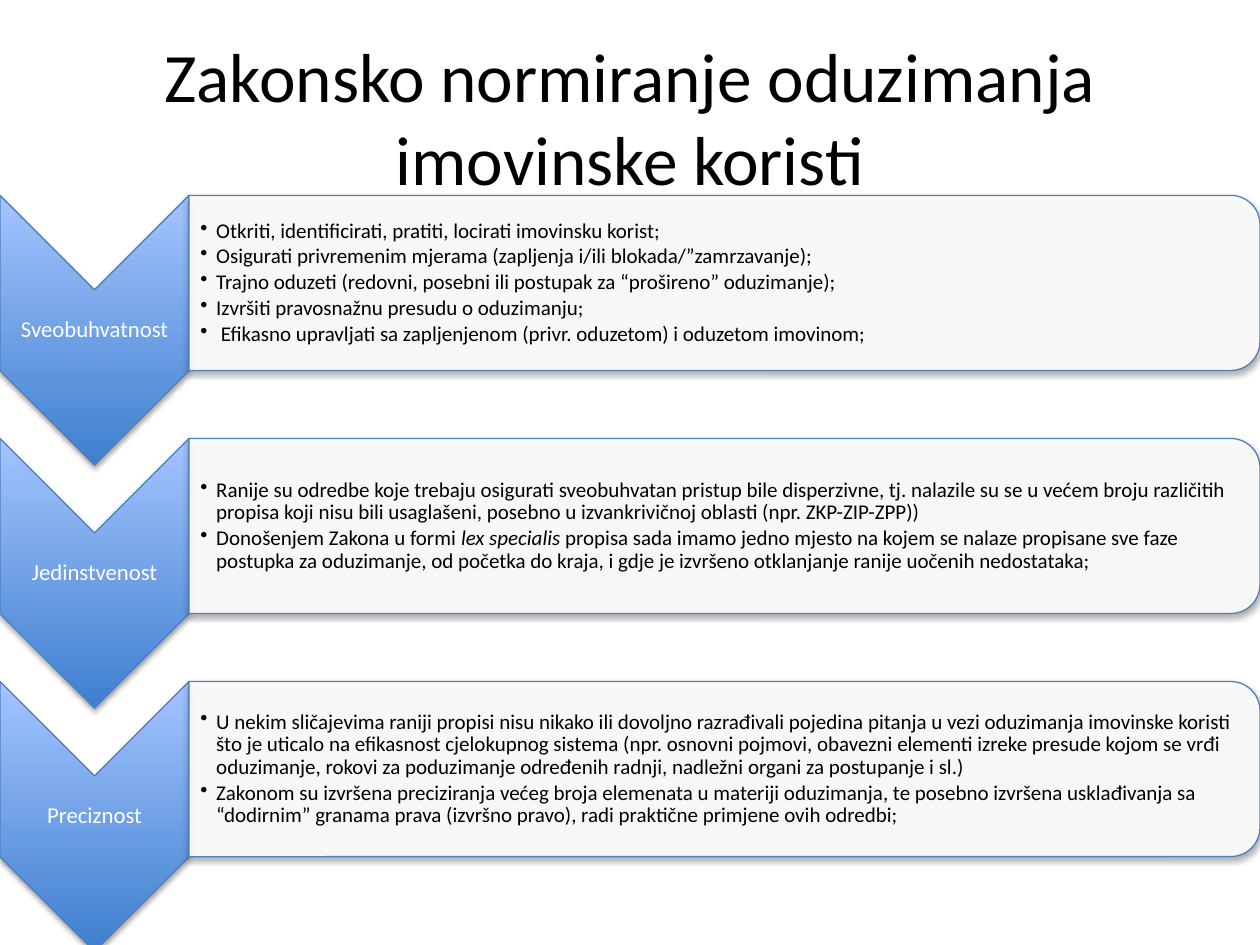
from dataclasses import dataclass

from lxml import etree
from pptx import Presentation
from pptx.dml.color import RGBColor
from pptx.enum.shapes import MSO_SHAPE
from pptx.enum.text import MSO_ANCHOR, MSO_AUTO_SIZE, PP_ALIGN
from pptx.oxml.ns import qn
from pptx.shapes.autoshape import Shape
from pptx.slide import Slide
from pptx.text.text import TextFrame, _Paragraph
from pptx.util import Cm, Pt

CHEVRON = MSO_SHAPE.CHEVRON
ROUNDED_PANEL = MSO_SHAPE.ROUND_2_SAME_RECTANGLE
MIDDLE = MSO_ANCHOR.MIDDLE
CENTER = PP_ALIGN.CENTER
NO_AUTOFIT = MSO_AUTO_SIZE.NONE

BLACK = RGBColor(0x00, 0x00, 0x00)
WHITE = RGBColor(0xFF, 0xFF, 0xFF)
OUTLINE = RGBColor(0x4F, 0x81, 0xBD)
GRADIENT_DARK = RGBColor(0x3F, 0x7F, 0xCE)
GRADIENT_LIGHT = RGBColor(0xA4, 0xC4, 0xFF)

FONT = "Calibri"
SLIDE_WIDTH = 25.4
FIRST_TOP = 3.94
ROW_PITCH = 4.9
CHEVRON_WIDTH, CHEVRON_HEIGHT = 3.81, 5.44
LABEL_HEIGHT = 1.63
PANEL_HEIGHT = 3.53
LIST_WIDTH, LIST_HEIGHT = 21.44, 3.18
THIN_INSET = 0.02


@dataclass(frozen=True)
class Span:
    text: str
    italic: bool = False


@dataclass(frozen=True)
class Principle:
    label: str
    points: list[list[Span]]


PRINCIPLES = [
    Principle("Sveobuhvatnost", [
        [Span("Otkriti, identificirati, pratiti, locirati imovinsku korist;")],
        [Span("Osigurati privremenim mjerama (zapljenja i/ili blokada/”zamrzavanje);")],
        [Span("Trajno oduzeti (redovni, posebni ili postupak za “prošireno” oduzimanje);")],
        [Span("Izvršiti pravosnažnu presudu o oduzimanju;")],
        [Span(" Efikasno upravljati sa zapljenjenom (privr. oduzetom) i oduzetom imovinom;")],
    ]),
    Principle("Jedinstvenost", [
        [Span("Ranije su odredbe koje trebaju osigurati sveobuhvatan pristup bile "
              "disperzivne, tj. nalazile su se u većem broju različitih propisa koji nisu "
              "bili usaglašeni, posebno u izvankrivičnoj oblasti (npr. ZKP-ZIP-ZPP))")],
        [Span("Donošenjem Zakona u formi "),
         Span("lex specialis", italic=True),
         Span(" propisa sada imamo jedno mjesto na kojem se nalaze propisane sve faze "
              "postupka za oduzimanje, od početka do kraja, i gdje je izvršeno "
              "otklanjanje ranije uočenih nedostataka;")],
    ]),
    Principle("Preciznost", [
        [Span("U nekim sličajevima raniji propisi nisu nikako ili dovoljno razrađivali "
              "pojedina pitanja u vezi oduzimanja imovinske koristi što je uticalo na "
              "efikasnost cjelokupnog sistema (npr. osnovni pojmovi, obavezni elementi "
              "izreke presude kojom se vrđi oduzimanje, rokovi za poduzimanje određenih "
              "radnji, nadležni organi za postupanje i sl.)")],
        [Span("Zakonom su izvršena preciziranja većeg broja elemenata u materiji "
              "oduzimanja, te posebno izvršena usklađivanja sa “dodirnim” granama prava "
              "(izvršno pravo), radi praktične primjene ovih odredbi;")],
    ]),
]


def add_run(paragraph: _Paragraph, span: Span, size: float, color: RGBColor) -> None:
    run = paragraph.add_run()
    run.text = span.text
    run.font.name = FONT
    run.font.size = Pt(size)
    run.font.color.rgb = color
    if span.italic:
        run.font.italic = True


def add_drop_shadow(shape: Shape) -> None:
    shape.shadow.inherit = False
    effects = shape._element.spPr.find(qn("a:effectLst"))
    shadow = etree.SubElement(effects, qn("a:outerShdw"), blurRad="40000",
                              dist="23000", dir="5400000", rotWithShape="0")
    color = etree.SubElement(shadow, qn("a:srgbClr"), val=str(BLACK))
    etree.SubElement(color, qn("a:alpha"), val="35000")


def add_turned_shape(slide: Slide, kind: MSO_SHAPE, left: float, top: float,
                     width: float, height: float) -> Shape:
    """Add a shape turned by 90 degrees that covers the given area on the slide."""
    shift = (width - height) / 2
    shape = slide.shapes.add_shape(kind, Cm(left + shift), Cm(top - shift),
                                   Cm(height), Cm(width))
    shape.rotation = 90
    shape.line.color.rgb = OUTLINE
    shape.line.width = Pt(0.75)
    add_drop_shadow(shape)
    return shape


def fill_chevron(shape: Shape) -> None:
    shape.fill.gradient()
    shape.fill.gradient_angle = 90
    for stop, color in zip(shape.fill.gradient_stops, (GRADIENT_DARK, GRADIENT_LIGHT)):
        stop.color.rgb = color
    shape._element.spPr.find(qn("a:gradFill")).set("rotWithShape", "0")


def fill_panel(shape: Shape) -> None:
    shape.fill.solid()
    shape.fill.fore_color.rgb = WHITE
    color = shape._element.spPr.find(qn("a:solidFill")).find(qn("a:srgbClr"))
    etree.SubElement(color, qn("a:alpha"), val="90000")


def add_text_frame(slide: Slide, left: float, top: float, width: float, height: float,
                   left_inset: float = THIN_INSET) -> TextFrame:
    frame = slide.shapes.add_textbox(Cm(left), Cm(top), Cm(width), Cm(height)).text_frame
    frame.word_wrap = True
    frame.vertical_anchor = MIDDLE
    frame.margin_left = Cm(left_inset)
    frame.margin_top = frame.margin_right = frame.margin_bottom = Cm(THIN_INSET)
    return frame


def format_bullet(paragraph: _Paragraph) -> None:
    paragraph.line_spacing = 0.9
    paragraph.space_after = Pt(1.8)
    properties = paragraph._p.get_or_add_pPr()
    properties.set("marL", str(Cm(0.32)))
    properties.set("indent", str(-Cm(0.32)))
    etree.SubElement(properties, qn("a:buChar"), char="•")


def add_principle(slide: Slide, principle: Principle, top: float) -> None:
    fill_chevron(add_turned_shape(slide, CHEVRON, 0, top, CHEVRON_WIDTH, CHEVRON_HEIGHT))
    label_top = top + (CHEVRON_HEIGHT - LABEL_HEIGHT) / 2
    label = add_text_frame(slide, 0, label_top, CHEVRON_WIDTH, LABEL_HEIGHT).paragraphs[0]
    label.alignment = CENTER
    label.line_spacing = 0.9
    add_run(label, Span(principle.label), 13, WHITE)

    fill_panel(add_turned_shape(slide, ROUNDED_PANEL, CHEVRON_WIDTH, top,
                                SLIDE_WIDTH - CHEVRON_WIDTH, PANEL_HEIGHT))
    list_top = top + (PANEL_HEIGHT - LIST_HEIGHT) / 2
    frame = add_text_frame(slide, CHEVRON_WIDTH, list_top, LIST_WIDTH, LIST_HEIGHT, 0.23)
    for index, spans in enumerate(principle.points):
        paragraph = frame.add_paragraph() if index else frame.paragraphs[0]
        format_bullet(paragraph)
        for span in spans:
            add_run(paragraph, span, 12, BLACK)


def add_title(slide: Slide, text: str) -> None:
    title = slide.shapes.title
    title.left, title.top, title.width, title.height = Cm(1.27), Cm(0.76), Cm(22.86), Cm(3.18)
    frame = title.text_frame
    frame.word_wrap = True
    frame.auto_size = NO_AUTOFIT
    frame.vertical_anchor = MIDDLE
    frame.paragraphs[0].alignment = CENTER
    add_run(frame.paragraphs[0], Span(text), 39.6, BLACK)


def main() -> None:
    presentation = Presentation()
    presentation.slide_width = Cm(SLIDE_WIDTH)
    presentation.slide_height = Cm(19.05)
    slide = presentation.slides.add_slide(presentation.slide_layouts.get_by_name("Title Only"))
    add_title(slide, "Zakonsko normiranje oduzimanja imovinske koristi")
    for row, principle in enumerate(PRINCIPLES):
        add_principle(slide, principle, FIRST_TOP + row * ROW_PITCH)
    presentation.save("out.pptx")


if __name__ == "__main__":
    main()
